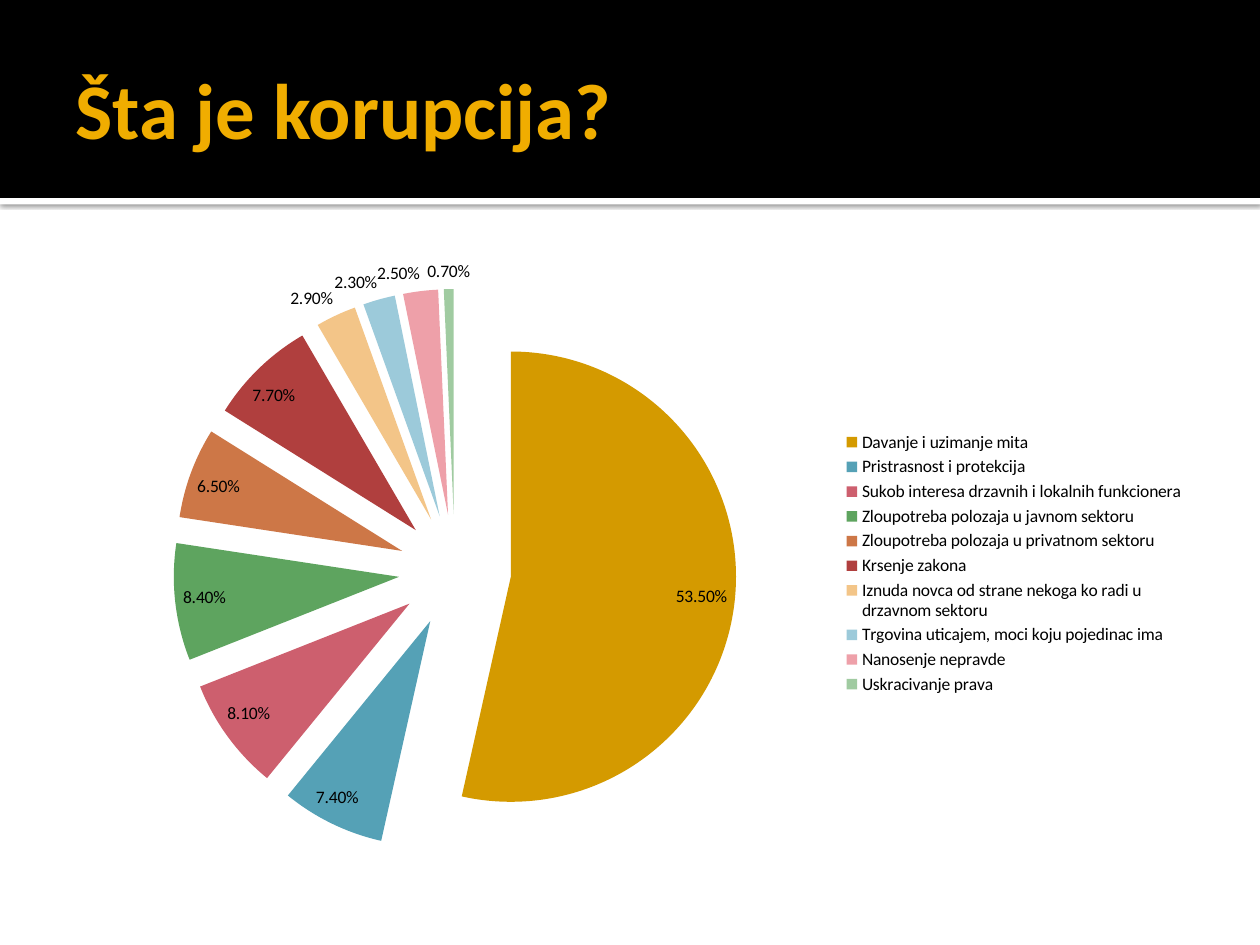
from lxml import etree
from pptx import Presentation
from pptx.chart.data import CategoryChartData
from pptx.dml.color import RGBColor
from pptx.enum.chart import XL_CHART_TYPE, XL_LABEL_POSITION, XL_LEGEND_POSITION
from pptx.enum.shapes import MSO_SHAPE
from pptx.enum.text import MSO_ANCHOR
from pptx.oxml.ns import qn
from pptx.util import Cm, Pt

RECTANGLE = MSO_SHAPE.RECTANGLE
MIDDLE = MSO_ANCHOR.MIDDLE
PIE = XL_CHART_TYPE.PIE
BEST_FIT = XL_LABEL_POSITION.BEST_FIT
LEGEND_RIGHT = XL_LEGEND_POSITION.RIGHT

BLACK = RGBColor(0x00, 0x00, 0x00)
WHITE = RGBColor(0xFF, 0xFF, 0xFF)
GOLD = RGBColor(0xF0, 0xAD, 0x00)

FONT = "Calibri"
EXPLOSION = 25  # percent of the pie radius

# Category, share, slice colour
SLICES = [
    ("Davanje i uzimanje mita", 0.535, RGBColor(0xD4, 0x9A, 0x00)),
    ("Pristrasnost i protekcija", 0.074, RGBColor(0x55, 0xA1, 0xB6)),
    ("Sukob interesa drzavnih i lokalnih funkcionera", 0.081, RGBColor(0xCD, 0x5F, 0x6E)),
    ("Zloupotreba polozaja u javnom sektoru", 0.084, RGBColor(0x5E, 0xA4, 0x5F)),
    ("Zloupotreba polozaja u privatnom sektoru", 0.065, RGBColor(0xCD, 0x77, 0x47)),
    ("Krsenje zakona", 0.077, RGBColor(0xB0, 0x3F, 0x3E)),
    ("Iznuda novca od strane nekoga ko radi u drzavnom sektoru", 0.029,
     RGBColor(0xF3, 0xC5, 0x88)),
    ("Trgovina uticajem, moci koju pojedinac ima", 0.023, RGBColor(0x9C, 0xCA, 0xDA)),
    ("Nanosenje nepravde", 0.025, RGBColor(0xEE, 0xA0, 0xA9)),
    ("Uskracivanje prava", 0.007, RGBColor(0xA0, 0xCB, 0xA1)),
]


def add_band(page, left, top, width, height, color):
    band = page.shapes.add_shape(RECTANGLE, left, top, width, height)
    band.shadow.inherit = False
    band.fill.solid()
    band.fill.fore_color.rgb = color
    band.line.fill.background()
    return band


def add_soft_shadow(shape):
    effects = shape._element.spPr.find(qn("a:effectLst"))
    shadow = etree.SubElement(effects, qn("a:outerShdw"), blurRad=str(Pt(2.5)),
                              dist=str(Pt(0.8)), dir="5400000", rotWithShape="0")
    color = etree.SubElement(shadow, qn("a:srgbClr"), val=str(BLACK))
    etree.SubElement(color, qn("a:alpha"), val="60000")


def add_header(page, left, top, width, height):
    # White rule with a shadow under the black band
    rule = add_band(page, left, top + height, width, Cm(0.13), WHITE)
    add_soft_shadow(rule)
    add_band(page, left, top, width, height, BLACK)

    # Title
    box = page.shapes.add_textbox(left + Cm(1.27), top + Cm(0.43),
                                  width - Cm(2.54), Cm(3.48))
    frame = box.text_frame
    frame.word_wrap = True
    frame.vertical_anchor = MIDDLE
    frame.margin_left = Cm(0.25)
    frame.margin_right = frame.margin_top = frame.margin_bottom = Cm(0.13)
    frame.text = "Šta je korupcija?"
    font = frame.paragraphs[0].runs[0].font
    font.name = FONT
    font.size = Pt(45)
    font.bold = True
    font.color.rgb = GOLD


def add_explosion(parent, previous_tag):
    explosion = etree.Element(qn("c:explosion"), val=str(EXPLOSION))
    parent.find(qn(previous_tag)).addnext(explosion)


def add_pie(page, left, top, width, height):
    data = CategoryChartData(number_format="0.00%")
    data.categories = [name for name, share, color in SLICES]
    data.add_series("Series 1", [share for name, share, color in SLICES])
    chart = page.shapes.add_chart(PIE, left, top, width, height, data).chart
    chart.has_title = False
    chart.font.name = FONT
    chart.font.size = Pt(10)
    chart.font.color.rgb = BLACK

    # Legend
    chart.has_legend = True
    chart.legend.position = LEGEND_RIGHT
    chart.legend.include_in_layout = False

    # Slices, pulled apart
    plot = chart.plots[0]
    plot.vary_by_categories = True
    series = plot.series[0]
    for index, (name, share, color) in enumerate(SLICES):
        fill = series.points[index].format.fill
        fill.solid()
        fill.fore_color.rgb = color
    for point in series._element.findall(qn("c:dPt")):
        add_explosion(point, "c:idx")
    add_explosion(series._element, "c:tx")

    # Value labels
    plot.has_data_labels = True
    labels = plot.data_labels
    labels.show_value = True
    labels.show_percentage = False
    labels.number_format = "0.00%"
    labels.number_format_is_linked = False
    labels.position = BEST_FIT


def main():
    deck = Presentation()
    deck.slide_width = Cm(25.4)
    deck.slide_height = Cm(19.05)
    page = deck.slides.add_slide(deck.slide_layouts[6])
    add_header(page, Cm(0), Cm(0), deck.slide_width, Cm(3.99))
    add_pie(page, Cm(1.27), Cm(4.93), Cm(22.86), Cm(12.85))
    deck.save("out.pptx")


if __name__ == "__main__":
    main()
